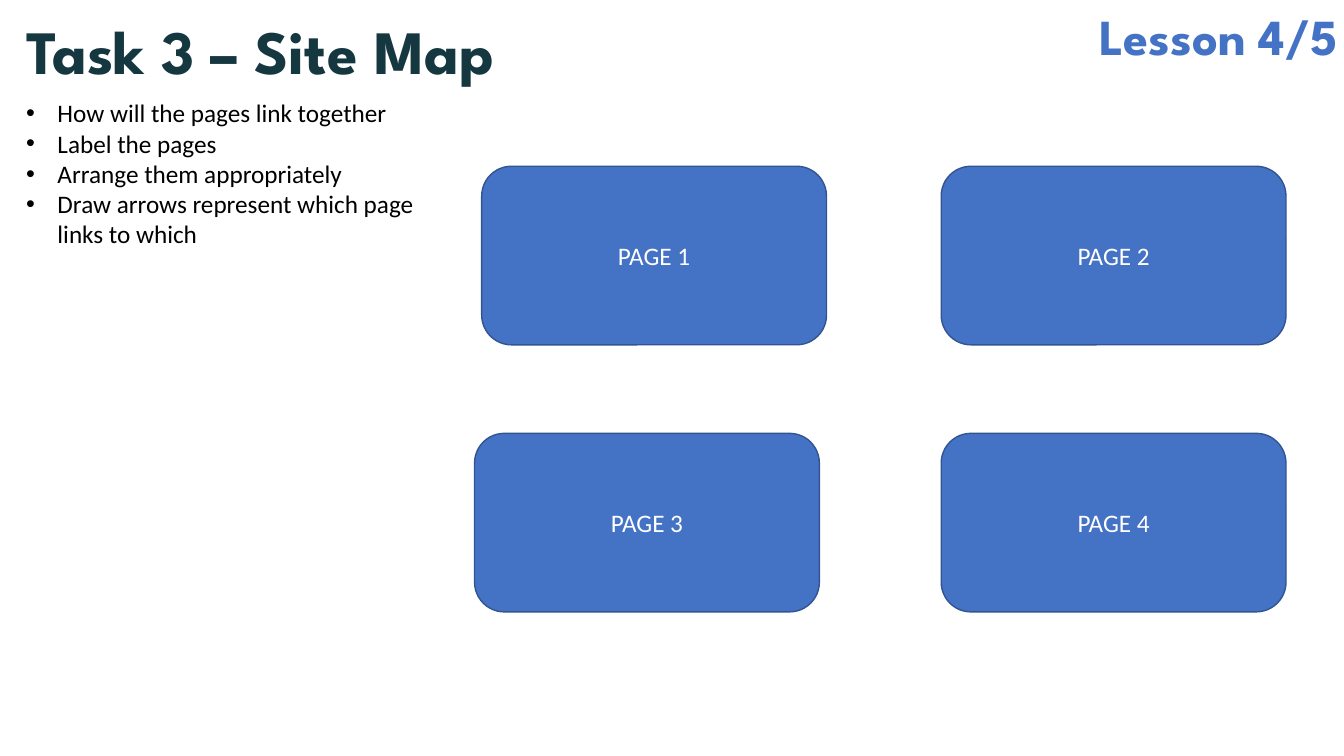
import pptx
import pptx.dml.color
import pptx.enum.shapes
import pptx.enum.text
import pptx.oxml.ns
import pptx.util
import lxml.etree

Cm = pptx.util.Cm
Pt = pptx.util.Pt
ALIGN = pptx.enum.text.PP_ALIGN
ANCHOR = pptx.enum.text.MSO_ANCHOR

BLUE, OUTLINE, TEAL = "4472C4", "325491", "143740"
HEADING = {"name": "League Spartan", "bold": True}
BODY = {"name": "Calibri", "size": Pt(18), "bold": False}


def rgb(value):
    return pptx.dml.color.RGBColor.from_string(value)


def place(sp, box):
    for name, length in zip(("left", "top", "width", "height"), box):
        setattr(sp, name, Cm(length))


def write(sp, lines, font, color, align=ALIGN.LEFT, anchor=ANCHOR.TOP):
    """Fill a shape with one formatted paragraph per line."""
    tf = sp.text_frame
    frame = {"word_wrap": True, "vertical_anchor": anchor,
             "auto_size": pptx.enum.text.MSO_AUTO_SIZE.NONE}
    for name, value in frame.items():
        setattr(tf, name, value)
    tf.text = "\n".join(lines)
    for p in tf.paragraphs:
        p.alignment = align
        for r in p.runs:
            for name, value in font.items():
                setattr(r.font, name, value)
            r.font.color.rgb = rgb(color)
    return tf


def add_title(s, box, text):
    sp = s.shapes.title
    place(sp, box)
    write(sp, [text], {**HEADING, "size": Pt(44)}, TEAL, anchor=ANCHOR.MIDDLE)


def add_lesson(s, box, text):
    sp = s.shapes.add_textbox(*map(Cm, box))
    write(sp, [text], {**HEADING, "size": Pt(36)}, BLUE, ALIGN.RIGHT)


def add_bullets(s, box, lines):
    sp = s.shapes.add_textbox(*map(Cm, box))
    tf = write(sp, lines, BODY, "000000")
    indent = Cm(0.79)
    for p in tf.paragraphs:
        pPr = p._p.get_or_add_pPr()
        pPr.set("marL", str(indent))
        pPr.set("indent", str(-indent))
        for tag, key, value in (("a:buFont", "typeface", "Arial"),
                                ("a:buChar", "char", "•")):
            bullet = lxml.etree.SubElement(pPr, pptx.oxml.ns.qn(tag))
            bullet.set(key, value)


def add_page(s, box, text):
    sp = s.shapes.add_shape(
        pptx.enum.shapes.MSO_SHAPE.ROUNDED_RECTANGLE, *map(Cm, box))
    sp.shadow.inherit = False
    sp.fill.solid()
    sp.fill.fore_color.rgb = rgb(BLUE)
    sp.line.color.rgb = rgb(OUTLINE)
    sp.line.width = Pt(1)
    write(sp, [text], BODY, "FFFFFF", ALIGN.CENTER, ANCHOR.MIDDLE)


def add_site_map(s, box):
    """Place four pages in two rows; the lower left one sits further left."""
    left, top, width, height = box
    page_w, page_h, shift = 8.69, 4.5, 0.18
    right, bottom = left + width - page_w, top + height - page_h
    corners = [(left + shift, top), (right, top), (left, bottom), (right, bottom)]
    for number, (x, y) in enumerate(corners, 1):
        add_page(s, (x, y, page_w, page_h), f"PAGE {number}")


def main():
    prs = pptx.Presentation()
    prs.slide_width, prs.slide_height = Cm(33.87), Cm(19.05)
    s = prs.slides.add_slide(prs.slide_layouts.get_by_name("Title Only"))

    # Heading and lesson number
    add_title(s, (0.41, 0.2, 13.54, 2.13), "Task 3 – Site Map")
    add_lesson(s, (26.24, 0, 7.72, 1.8), "Lesson 4/5")

    # Instructions
    add_bullets(s, (0.41, 2.34, 11.33, 4.11), [
        "How will the pages link together",
        "Label the pages",
        "Arrange them appropriately",
        "Draw arrows represent which page links to which",
    ])

    # Pages to be linked
    add_site_map(s, (11.96, 4.19, 20.45, 11.23))

    prs.save("out.pptx")


if __name__ == "__main__":
    main()
